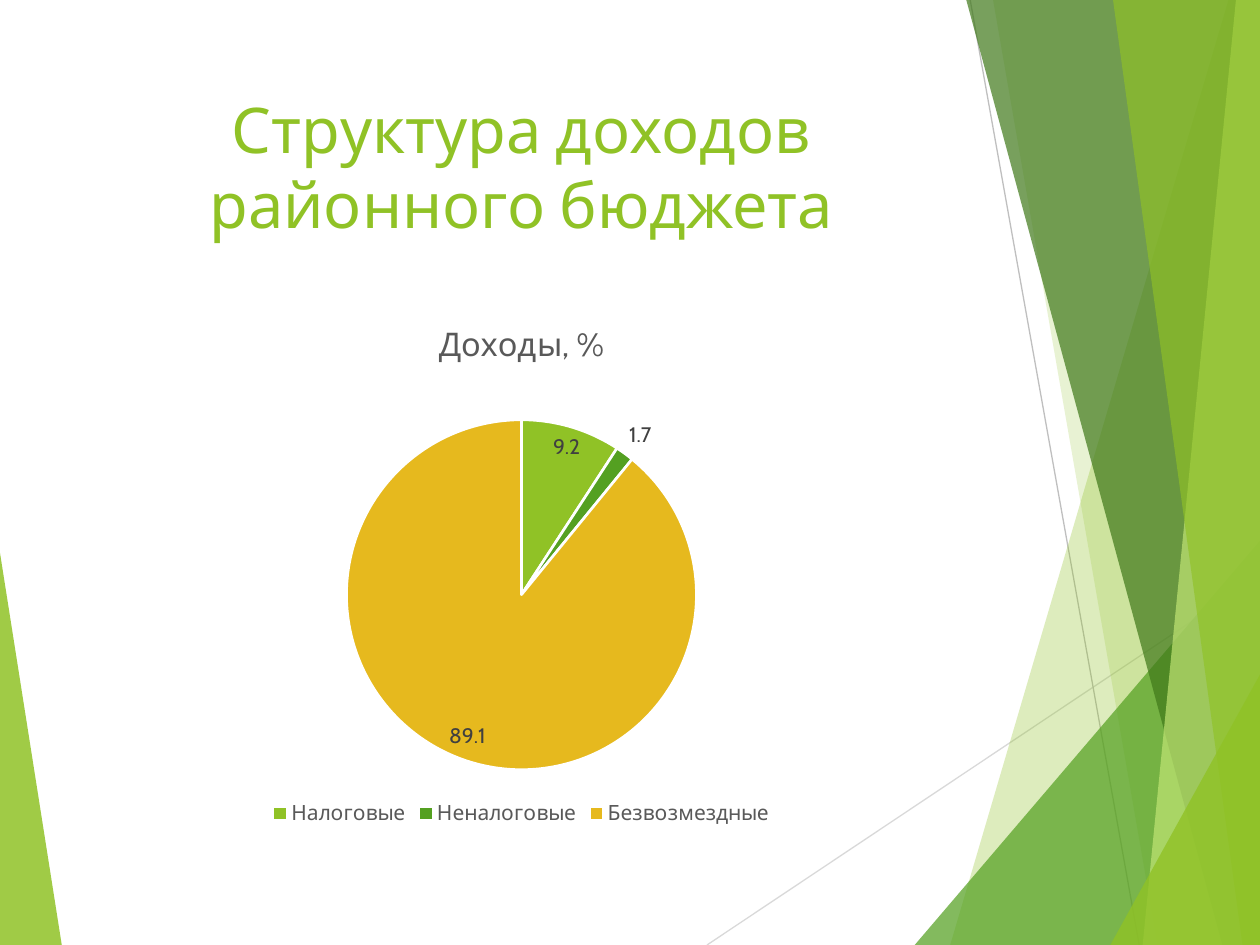
from lxml import etree
from pptx import Presentation
from pptx.chart.data import CategoryChartData
from pptx.dml.color import RGBColor
from pptx.enum.chart import XL_CHART_TYPE, XL_LABEL_POSITION, XL_LEGEND_POSITION
from pptx.enum.shapes import MSO_CONNECTOR
from pptx.enum.text import MSO_ANCHOR, PP_ALIGN
from pptx.oxml.ns import qn
from pptx.util import Pt

PIE = XL_CHART_TYPE.PIE
BEST_FIT = XL_LABEL_POSITION.BEST_FIT
BOTTOM = XL_LEGEND_POSITION.BOTTOM
STRAIGHT = MSO_CONNECTOR.STRAIGHT
TOP = MSO_ANCHOR.TOP
CENTER = PP_ALIGN.CENTER

LIME = RGBColor(0x90, 0xC2, 0x26)
GREEN = RGBColor(0x54, 0xA0, 0x21)
DARK_GREEN = RGBColor(0x3F, 0x78, 0x19)
PALE_LIME = RGBColor(0xC0, 0xE4, 0x74)
GOLD = RGBColor(0xE6, 0xB9, 0x1E)
WHITE = RGBColor(0xFF, 0xFF, 0xFF)
LIGHT_GRAY = RGBColor(0xD9, 0xD9, 0xD9)
MID_GRAY = RGBColor(0xBF, 0xBF, 0xBF)
TEXT_GRAY = RGBColor(0x59, 0x59, 0x59)
LABEL_GRAY = RGBColor(0x40, 0x40, 0x40)
FONT = "Cabin"
WIDTH, HEIGHT = 720, 540


def add_facet(points, color, opacity):
    corners = [(Pt(x), Pt(y)) for x, y in points]
    builder = slide.shapes.build_freeform(*corners[0])
    builder.add_line_segments(corners[1:], close=True)
    facet = builder.convert_to_shape()
    facet.shadow.inherit = False
    facet.fill.solid()
    facet.fill.fore_color.rgb = color
    facet.line.fill.background()
    fill_color = facet.fill._xPr.find(qn("a:solidFill"))[0]
    etree.SubElement(fill_color, qn("a:alpha"), val=str(opacity * 1000))


def style_font(font, size, color):
    font.name = FONT
    font.size = Pt(size)
    font.bold = False
    font.color.rgb = color


deck = Presentation()
deck.slide_width = Pt(WIDTH)
deck.slide_height = Pt(HEIGHT)
slide = deck.slides.add_slide(deck.slide_layouts[6])

add_facet([(0, 316), (35.3, HEIGHT), (0, HEIGHT)], LIME, 85)

rays = [
    ((404, HEIGHT), (WIDTH, 329), LIGHT_GRAY),
    ((554.4, 0), (651, HEIGHT), MID_GRAY),
]
for start, end, color in rays:
    ray = slide.shapes.add_connector(STRAIGHT, *map(Pt, start + end))
    ray.line.color.rgb = color
    ray.line.width = Pt(0.75)
    etree.SubElement(ray._element.spPr, qn("a:effectLst"))

facets = [
    (702, 0, 543, LIME, 30),
    (567.5, 0, 661.5, LIME, 20),
    (WIDTH, 309, 522.7, GREEN, 72),
    (552.2, 0, 698.5, DARK_GREEN, 70),
    (706.3, 0, 653, PALE_LIME, 70),
    (636, 0, 710, LIME, 65),
    (WIDTH, 385.5, 634.5, LIME, 80),
]
for top_x, top_y, bottom_x, color, opacity in facets:
    points = [(top_x, top_y), (bottom_x, HEIGHT), (WIDTH, HEIGHT), (WIDTH, top_y)]
    add_facet(points[:3] if top_x == WIDTH else points, color, opacity)

box = slide.shapes.add_textbox(Pt(48), Pt(48), Pt(500), Pt(104))
box.text_frame.word_wrap = True
box.text_frame.vertical_anchor = TOP
para = box.text_frame.paragraphs[0]
para.alignment = CENTER
span = para.add_run()
span.text = "Структура доходов районного бюджета"
style_font(span.font, 36, LIME)

data = CategoryChartData(number_format="0.0")
data.categories = ["Налоговые", "Неналоговые", "Безвозмездные"]
data.add_series("Доходы, %", [9.2, 1.7, 89.1])
chart = slide.shapes.add_chart(PIE, Pt(48), Pt(170), Pt(500), Pt(305), data).chart
chart.font.name = FONT
chart.font.size = Pt(10)

chart.has_title = True
span = chart.chart_title.text_frame.paragraphs[0].add_run()
span.text = "Доходы, %"
style_font(span.font, 18.6, TEXT_GRAY)
chart.chart_title.include_in_layout = False

chart.has_legend = True
chart.legend.position = BOTTOM
chart.legend.include_in_layout = False
style_font(chart.legend.font, 12, TEXT_GRAY)

plot = chart.plots[0]
plot.vary_by_categories = True
plot.has_data_labels = True
labels = plot.data_labels
labels.show_value = True
labels.show_percentage = False
labels.number_format = "0.0"
labels.number_format_is_linked = False
labels.position = BEST_FIT
style_font(labels.font, 12, LABEL_GRAY)

for index, color in enumerate([LIME, GREEN, GOLD]):
    slice_format = plot.series[0].points[index].format
    slice_format.fill.solid()
    slice_format.fill.fore_color.rgb = color
    slice_format.line.color.rgb = WHITE
    slice_format.line.width = Pt(1.5)

deck.save("out.pptx")
